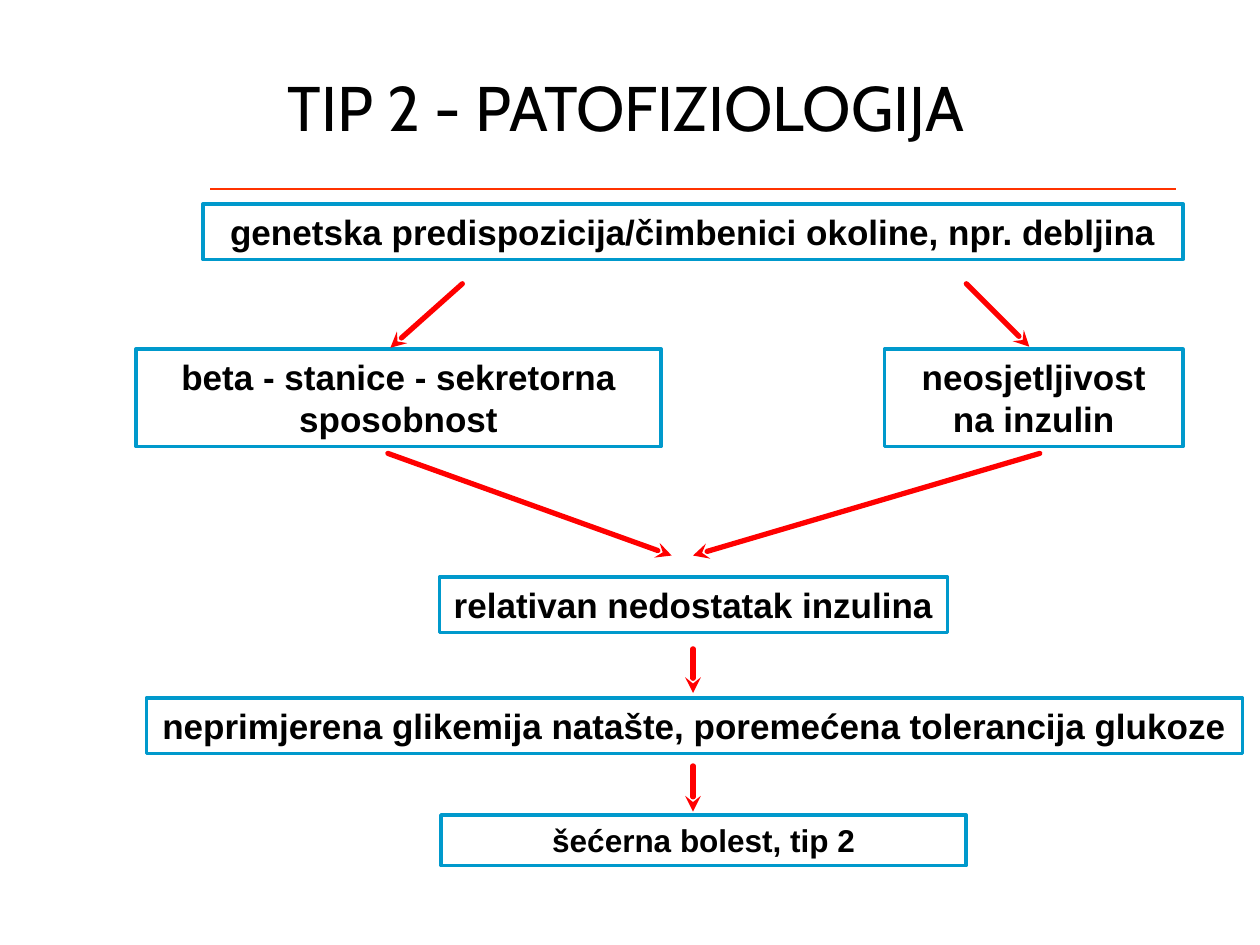
import pptx
import pptx.util
import pptx.dml.color
import pptx.enum.shapes
import pptx.enum.text
import pptx.oxml.ns
import lxml.etree
from pptx.util import Cm

MID = 13.97
LEFT, RIGHT = 4.09, 23.85
SIDE = 7.04
CAUSE, JOIN = 5.72, 9.14

BOXES = [
    ("genetska predispozicija/čimbenici okoline, npr. debljina", LEFT, 4.11, RIGHT - LEFT, 1.12, 20, True),
    ("beta - stanice - sekretorna sposobnost", 2.74, SIDE, 10.59, 1.96, 20, True),
    ("neosjetljivost na inzulin", 17.83, SIDE, RIGHT - 17.83, 1.96, 20, True),
    ("relativan nedostatak inzulina", 8.86, 11.63, 10.24, 1.12, 20, False),
    ("neprimjerena glikemija natašte, poremećena tolerancija glukoze", 2.95, 14.07, 22.1, 1.12, 20, False),
    ("šećerna bolest, tip 2", 8.89, 16.43, 10.59, 1.02, 18, True),
]

ARROWS = [
    (9.32, CAUSE, 7.87, 7.01),
    (19.48, CAUSE, 20.75, 6.99),
    (7.82, JOIN, 13.54, 11.2),
    (20.96, JOIN, MID, 11.2),
    (MID, 13.08, MID, 13.97),
    (MID, 15.44, MID, 16.36),
]


def paint(code):
    return pptx.dml.color.RGBColor.from_string(code)


def write(frame, text, size=20, font="Arial", bold=False, color="000000", wrap=True):
    frame.word_wrap = wrap
    frame.text = text
    para = frame.paragraphs[0]
    para.alignment = pptx.enum.text.PP_ALIGN.CENTER
    style = para.runs[0].font
    style.size = pptx.util.Pt(size)
    style.name = font
    style.bold = bold
    style.color.rgb = paint(color)


def head(slide, text):
    title = slide.shapes.title
    title.left, title.top = Cm(1.5), Cm(0.91)
    title.width, title.height = Cm(22.86), Cm(3.18)
    frame = title.text_frame
    write(frame, text, size=36, font="Cabin")
    frame.auto_size = pptx.enum.text.MSO_AUTO_SIZE.NONE
    frame.vertical_anchor = pptx.enum.text.MSO_ANCHOR.MIDDLE
    frame.margin_right, frame.margin_bottom = Cm(0.86), Cm(0.85)


def box(slide, text, left, top, width, height, size, wrap):
    shape = slide.shapes.add_shape(
        pptx.enum.shapes.MSO_SHAPE.RECTANGLE, Cm(left), Cm(top), Cm(width), Cm(height))
    shape.shadow.inherit = False
    shape.fill.background()
    shape.line.color.rgb = paint("0099CC")
    shape.line.width = pptx.util.Pt(2)
    frame = shape.text_frame
    write(frame, text, size=size, bold=True, wrap=wrap)
    frame.vertical_anchor = pptx.enum.text.MSO_ANCHOR.TOP
    frame.auto_size = pptx.enum.text.MSO_AUTO_SIZE.SHAPE_TO_FIT_TEXT


def line(slide, ends, color, width, arrow=False):
    link = slide.shapes.add_connector(
        pptx.enum.shapes.MSO_CONNECTOR.STRAIGHT, *[Cm(end) for end in ends])
    link.line.color.rgb = paint(color)
    link.line.width = pptx.util.Pt(width)
    props = link._element.spPr
    name = pptx.oxml.ns.qn
    if arrow:
        stroke = props.find(name("a:ln"))
        stroke.set("cap", "rnd")
        lxml.etree.SubElement(stroke, name("a:tailEnd"), type="stealth")
    lxml.etree.SubElement(props, name("a:effectLst"))


def main():
    deck = pptx.Presentation()
    deck.slide_width, deck.slide_height = Cm(25.4), Cm(19.05)
    slide = deck.slides.add_slide(deck.slide_layouts[5])
    head(slide, "TIP 2 - PATOFIZIOLOGIJA")
    for item in BOXES:
        box(slide, *item)
    for ends in ARROWS:
        line(slide, ends, "FF0000", 3, arrow=True)
    line(slide, (4.24, 3.81, 23.7, 3.81), "FF3300", 0.75)
    deck.save("out.pptx")


if __name__ == "__main__":
    main()
